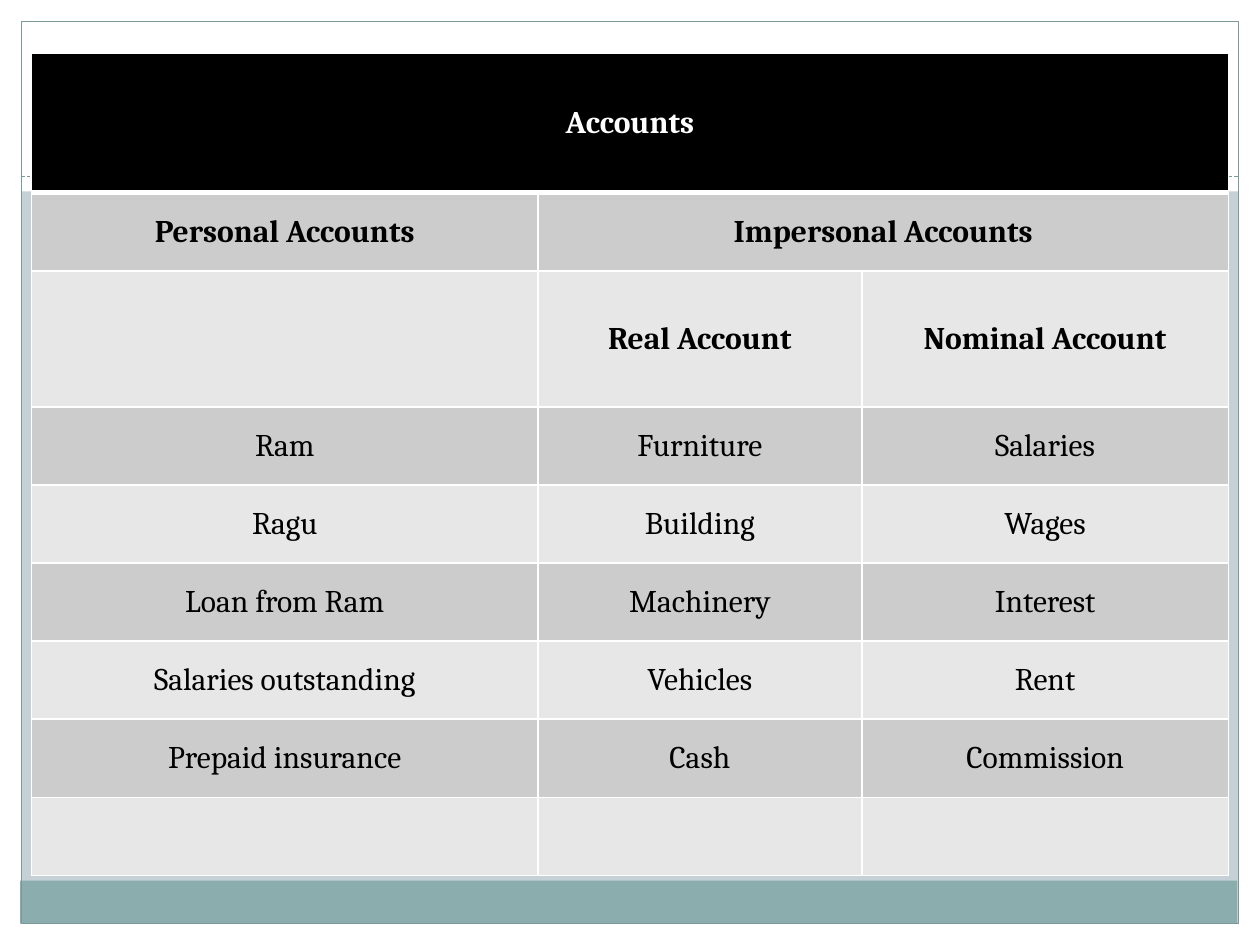
"""Build a slide that classifies accounts in a three-column table."""
from dataclasses import dataclass

from lxml import etree
from pptx import Presentation
from pptx.dml.color import RGBColor
from pptx.enum.dml import MSO_LINE
from pptx.enum.shapes import MSO_CONNECTOR, MSO_SHAPE
from pptx.enum.text import MSO_ANCHOR, PP_ALIGN
from pptx.oxml.ns import qn
from pptx.util import Pt

RECTANGLE = MSO_SHAPE.RECTANGLE
STRAIGHT = MSO_CONNECTOR.STRAIGHT
DASH = MSO_LINE.SQUARE_DOT
MIDDLE = MSO_ANCHOR.MIDDLE
CENTER = PP_ALIGN.CENTER
PX = 9144


@dataclass(frozen=True)
class Theme:
    font: str = "Cambria"
    size: int = 18
    rule: float = 0.75
    grid: int = 1
    header_rule: int = 3
    backdrop: str = "C5D1D7"
    paper: str = "FFFFFF"
    footer: str = "8CADAE"
    frame: str = "7C999A"
    ink: str = "000000"
    bands: tuple = ("CCCCCC", "E7E7E7")


theme = Theme()


def write(cell, text, color=theme.ink, bold=False):
    cell.vertical_anchor = MIDDLE
    paragraph = cell.text_frame.paragraphs[0]
    paragraph.alignment = CENTER
    run = paragraph.add_run()
    run.text = text
    run.font.name = theme.font
    run.font.size = Pt(theme.size)
    run.font.bold = bold
    run.font.color.rgb = RGBColor.from_string(color)


def add_border(cell, side, width):
    properties = cell._tc.get_or_add_tcPr()
    edge = etree.SubElement(properties, qn(f"a:ln{side}"), w=str(Pt(width)))
    fill = etree.SubElement(edge, qn("a:solidFill"))
    etree.SubElement(fill, qn("a:srgbClr"), val=theme.paper)


deck = Presentation()
deck.slide_width, deck.slide_height = 1000 * PX, 750 * PX
slide = deck.slides.add_slide(deck.slide_layouts[6])
backdrop = slide.background.fill
backdrop.solid()
backdrop.fore_color.rgb = RGBColor.from_string(theme.backdrop)

panels = [
    (0, 733, 1000, 17, theme.paper, None),
    (0, 0, 1000, 152, theme.paper, None),
    (0, 0, 17, 750, theme.paper, None),
    (983, 0, 17, 750, theme.paper, None),
    (16, 699, 966, 34, theme.footer, None),
    (17, 17, 966, 716, None, theme.frame),
]
for left, top, width, height, fill, outline in panels:
    panel = slide.shapes.add_shape(RECTANGLE, left * PX, top * PX, width * PX, height * PX)
    panel.shadow.inherit = False
    if fill:
        panel.fill.solid()
        panel.fill.fore_color.rgb = RGBColor.from_string(fill)
    else:
        panel.fill.background()
    if outline:
        panel.line.color.rgb = RGBColor.from_string(outline)
        panel.line.width = Pt(theme.rule)
    else:
        panel.line.fill.background()

divider = slide.shapes.add_connector(STRAIGHT, 17 * PX, 140 * PX, 983 * PX, 140 * PX)
divider.line.color.rgb = RGBColor.from_string(theme.frame)
divider.line.width = Pt(theme.rule)
divider.line.dash_style = DASH
etree.SubElement(divider._element.spPr, qn("a:effectLst"))

column_widths = [402, 257, 291]
row_heights = [111, 62, 108] + [62] * 6
entries = [
    ("Accounts", "", ""),
    ("Personal Accounts", "Impersonal Accounts", ""),
    ("", "Real Account", "Nominal Account"),
    ("Ram", "Furniture", "Salaries"),
    ("Ragu", "Building", "Wages"),
    ("Loan from Ram", "Machinery", "Interest"),
    ("Salaries outstanding", "Vehicles", "Rent"),
    ("Prepaid insurance", "Cash", "Commission"),
    ("", "", ""),
]
accounts = slide.shapes.add_table(
    len(entries), len(column_widths), 25 * PX, 42 * PX,
    sum(column_widths) * PX, sum(row_heights) * PX,
).table
for column, width in zip(accounts.columns, column_widths):
    column.width = width * PX
for row, height in zip(accounts.rows, row_heights):
    row.height = height * PX

for row_index, labels in enumerate(entries):
    is_header = row_index == 0
    shade = theme.ink if is_header else theme.bands[(row_index - 1) % 2]
    top_rule = theme.header_rule if row_index == 1 else theme.grid
    bottom_rule = theme.header_rule if is_header else theme.grid
    borders = {"L": theme.grid, "R": theme.grid, "T": top_rule, "B": bottom_rule}
    for column_index, label in enumerate(labels):
        cell = accounts.cell(row_index, column_index)
        for side, width in borders.items():
            add_border(cell, side, width)
        cell.fill.solid()
        cell.fill.fore_color.rgb = RGBColor.from_string(shade)
        if label:
            write(cell, label, color=theme.paper if is_header else theme.ink, bold=row_index < 3)

accounts.cell(0, 0).merge(accounts.cell(0, 2))
accounts.cell(1, 1).merge(accounts.cell(1, 2))

deck.save("out.pptx")
